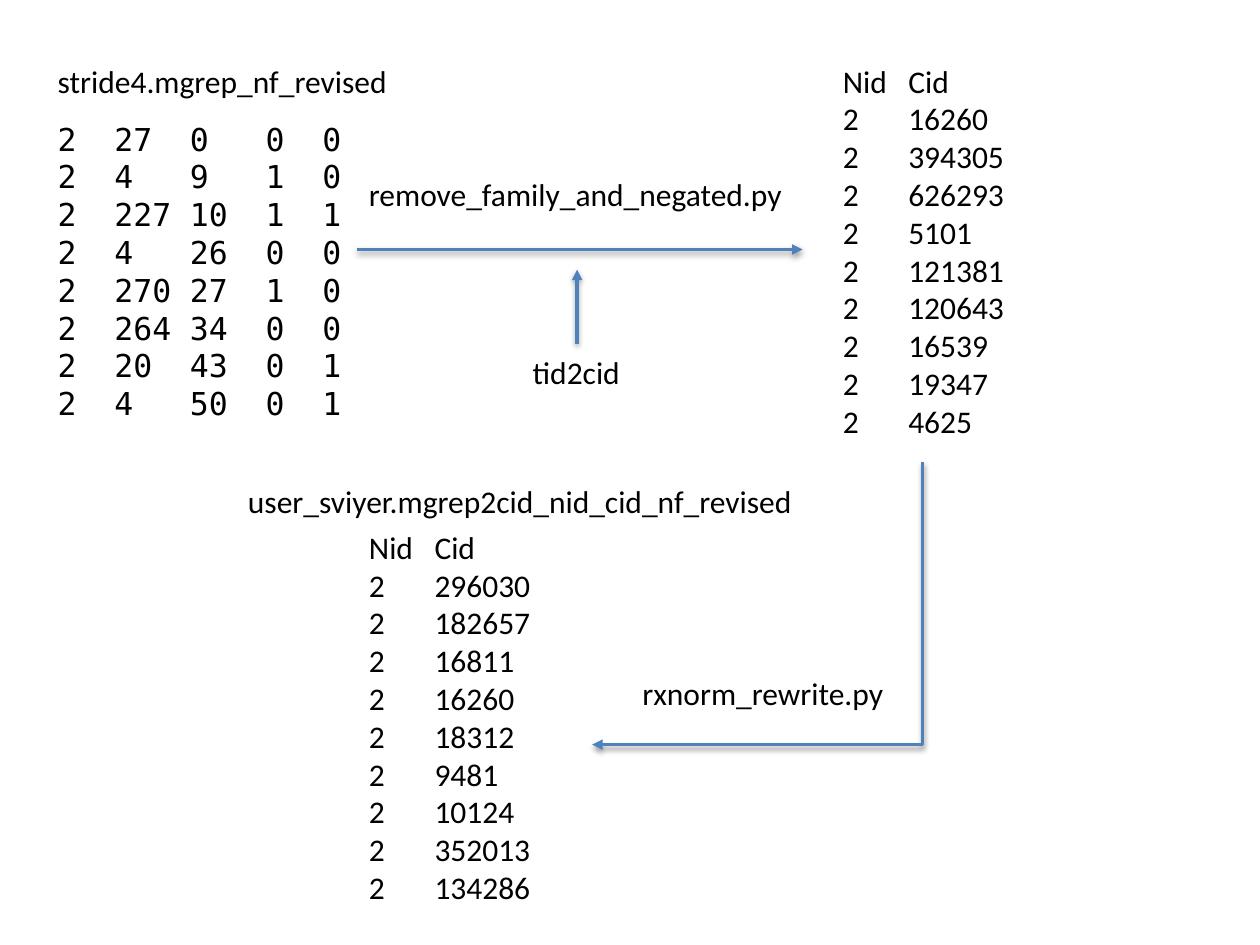
"""Build a data-flow slide: note annotations rewritten into concept tables by two scripts."""
from lxml import etree
from pptx import Presentation
from pptx import util as u
from pptx.dml.color import RGBColor
from pptx.enum import shapes, text
from pptx.oxml.ns import qn

ARROW_COLOR, TEXT_COLOR = "4F81BD", "000000"
SANS, MONO = "Calibri", "DejaVu Sans Mono"
CHARACTER = 0.15
NOTE_STOPS = [count * CHARACTER for count in (3, 7, 11, 14)]
PAIR_STOPS = [0.52]

NOTE_ROWS = [
    (2, 27, 0, 0, 0),
    (2, 4, 9, 1, 0),
    (2, 227, 10, 1, 1),
    (2, 4, 26, 0, 0),
    (2, 270, 27, 1, 0),
    (2, 264, 34, 0, 0),
    (2, 20, 43, 0, 1),
    (2, 4, 50, 0, 1),
]
FILTERED_CIDS = [16260, 394305, 626293, 5101, 121381, 120643, 16539, 19347, 4625]
REWRITTEN_CIDS = [296030, 182657, 16811, 16260, 18312, 9481, 10124, 352013, 134286]


def pair_rows(cids):
    """Return a header and one row per concept of note 2."""
    return [("Nid", "Cid")] + [(2, cid) for cid in cids]


LISTINGS = [
    (NOTE_ROWS, (0.36, 0.9, 2.47, 2.52), MONO, NOTE_STOPS),
    (pair_rows(FILTERED_CIDS), (6.59, 0.44, 2.48, 3.13), SANS, PAIR_STOPS),
    (pair_rows(REWRITTEN_CIDS), (2.83, 4.14, 1.75, 3.13), SANS, PAIR_STOPS),
]
LABELS = [
    ("stride4.mgrep_nf_revised", (0.36, 0.44, 2.85, 0.4)),
    ("remove_family_and_negated.py", (2.83, 1.34, 3.53, 0.4)),
    ("rxnorm_rewrite.py", (5, 5.3, 2.14, 0.4)),
    ("user_sviyer.mgrep2cid_nid_cid_nf_revised", (1.87, 3.78, 4.6, 0.4)),
    ("tid2cid", (4.13, 2.75, 0.9, 0.4)),
]
STRAIGHT, ELBOW = shapes.MSO_CONNECTOR.STRAIGHT, shapes.MSO_CONNECTOR.ELBOW
ARROWS = [
    (STRAIGHT, (2.83, 1.98), (6.37, 1.98)),
    (STRAIGHT, (4.58, 2.73), (4.58, 2.14)),
    (ELBOW, (7.32, 3.67), (4.7, 5.91)),
]


def color(value):
    """Turn a hex string into a colour."""
    return RGBColor.from_string(value)


def add_text(slide, lines, box, font_name=SANS, stops=(), wrap=False):
    """Add a text box with one paragraph per line and the given tab stops."""
    shape = slide.shapes.add_textbox(*map(u.Inches, box))
    frame = shape.text_frame
    frame.text = "\n".join(lines)
    frame.word_wrap = wrap
    frame.auto_size = text.MSO_AUTO_SIZE.SHAPE_TO_FIT_TEXT
    for paragraph in frame.paragraphs:
        if stops:
            tabs = etree.SubElement(paragraph._p.get_or_add_pPr(), qn("a:tabLst"))
            for stop in stops:
                etree.SubElement(tabs, qn("a:tab"), pos=str(u.Inches(stop)), algn="l")
        for run in paragraph.runs:
            run.font.name = font_name
            run.font.size = u.Pt(18)
            run.font.color.rgb = color(TEXT_COLOR)


def add_arrow(slide, kind, start, end):
    """Add an arrow; an elbow goes straight down before it turns."""
    connector = slide.shapes.add_connector(kind, *map(u.Inches, start + end))
    connector.line.color.rgb = color(ARROW_COLOR)
    connector.line.width = u.Pt(2)
    etree.SubElement(connector.line._get_or_add_ln(), qn("a:tailEnd"), type="triangle")
    if kind == ELBOW:
        adjustments = connector._element.spPr.find(".//" + qn("a:avLst"))
        etree.SubElement(adjustments, qn("a:gd"), name="adj1", fmla="val 0")


def main():
    """Build and save the slide."""
    presentation = Presentation()
    presentation.slide_width, presentation.slide_height = u.Inches(10), u.Inches(7.5)
    slide = presentation.slides.add_slide(presentation.slide_layouts[6])
    for rows, box, font_name, stops in LISTINGS:
        lines = ["\t".join(map(str, row)) for row in rows]
        add_text(slide, lines, box, font_name, stops, wrap=True)
    for label, box in LABELS:
        add_text(slide, [label], box)
    for arrow in ARROWS:
        add_arrow(slide, *arrow)
    presentation.save("out.pptx")


if __name__ == "__main__":
    main()
